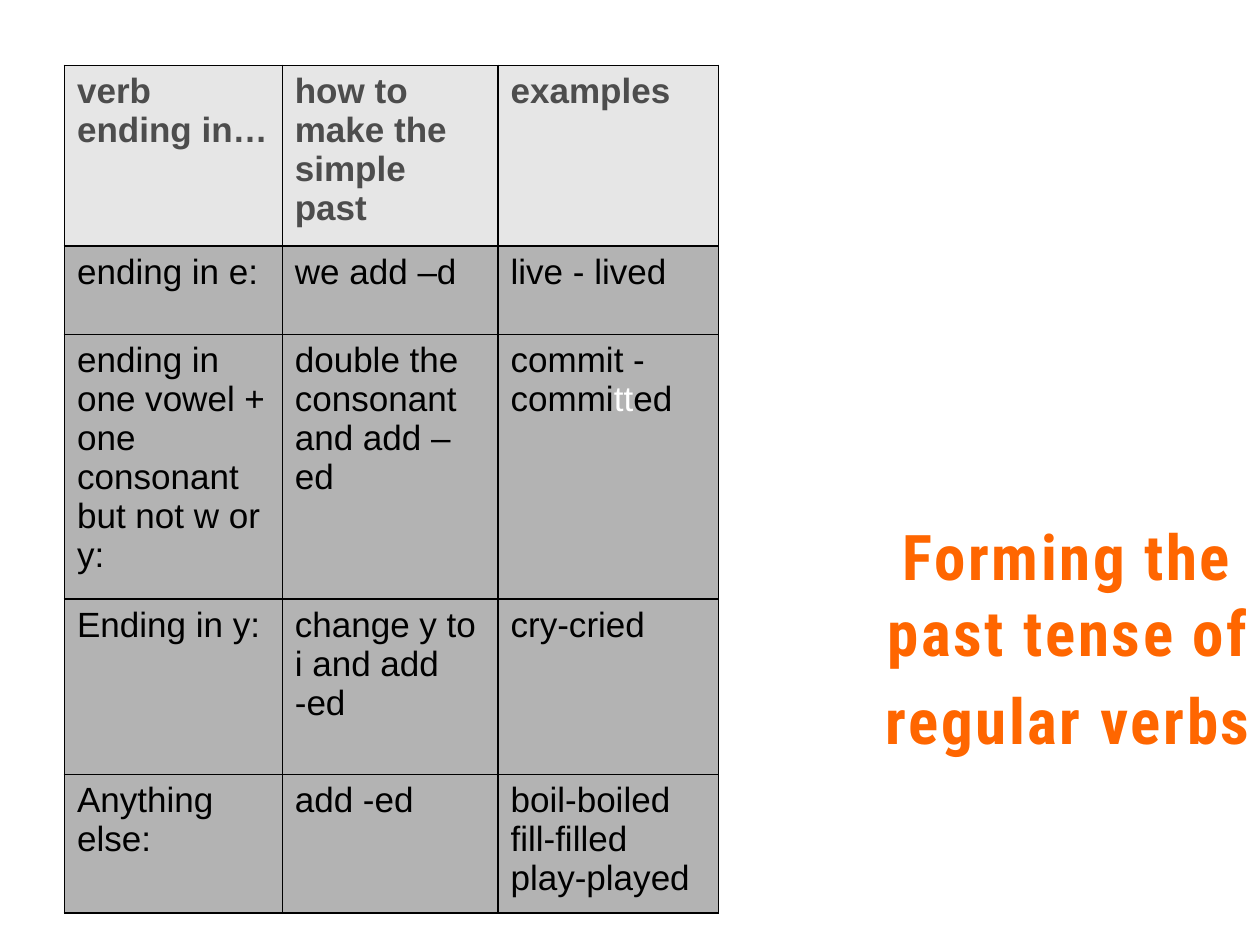
from lxml import etree
from pptx import Presentation
from pptx import util as u
from pptx.dml.color import RGBColor
from pptx.enum import text
from pptx.oxml import ns

BLACK = RGBColor(0x00, 0x00, 0x00)
WHITE = RGBColor(0xFF, 0xFF, 0xFF)
SLATE = RGBColor(0x4D, 0x4D, 0x4D)
LIGHT = RGBColor(0xE6, 0xE6, 0xE6)
GREY = RGBColor(0xB3, 0xB3, 0xB3)
ORANGE = RGBColor(0xFF, 0x66, 0x00)

WIDTHS = [4.39, 4.35, 4.45]
HEIGHTS = [3.53, 1.78, 4.6, 3.53, 1.78]
ROWS = [
    ["verb ending in…", "how to make the simple past", "examples"],
    ["ending in e:", "we add –d", "live - lived"],
    ["ending in one vowel + one consonant but not w or y:",
     "double the consonant and add –ed",
     [[("commit - commi", BLACK), ("tt", WHITE), ("ed", BLACK)]]],
    ["Ending in y:", "change y to i and add -ed", "cry-cried"],
    ["Anything else:", "add -ed", ["boil-boiled", "fill-filled", "play-played"]],
]


def write(frame, words, font="Arial", size=20, color=BLACK, bold=False,
          align=None, gap=0, track=0):
    paras = [words] if isinstance(words, str) else words
    for num, para in enumerate(paras):
        line = frame.add_paragraph() if num else frame.paragraphs[0]
        line.alignment = align
        if num and gap:
            line.space_before = u.Pt(gap)
        parts = [(para, color)] if isinstance(para, str) else para
        for part, tint in parts:
            run = line.add_run()
            run.text = part
            run.font.name = font
            run.font.size = u.Pt(size)
            run.font.bold = bold
            run.font.color.rgb = tint
            if track:
                run.font._element.set("spc", str(round(track * 100)))


class Deck:
    """Holds the style and the current slide, and adds elements to it."""

    def __init__(self, slide, edge=BLACK, weight=1):
        self.slide = slide
        self.edge = edge
        self.weight = weight

    def title(self, left, top, width, height, words):
        box = self.slide.shapes.add_textbox(
            u.Cm(left), u.Cm(top), u.Cm(width), u.Cm(height))
        box.text_frame.word_wrap = True
        write(box.text_frame, words, font="Roboto Condensed", size=36,
              color=ORANGE, bold=True, align=text.PP_ALIGN.CENTER,
              gap=7, track=1.5)

    def border(self, cell):
        props = cell._tc.get_or_add_tcPr()
        for spot, side in enumerate(("lnL", "lnR", "lnT", "lnB")):
            line = etree.Element(ns.qn(f"a:{side}"), w=str(u.Pt(self.weight)))
            fill = etree.SubElement(line, ns.qn("a:solidFill"))
            etree.SubElement(fill, ns.qn("a:srgbClr"), val=str(self.edge))
            props.insert(spot, line)

    def table(self, left, top, widths, heights, rows):
        grid = self.slide.shapes.add_table(
            len(rows), len(widths), u.Cm(left), u.Cm(top),
            u.Cm(sum(widths)), u.Cm(sum(heights))).table
        for col, width in zip(grid.columns, widths):
            col.width = u.Cm(width)
        for num, (row, height) in enumerate(zip(grid.rows, heights)):
            row.height = u.Cm(height)
            head = num == 0
            for cell, words in zip(row.cells, rows[num]):
                cell.fill.solid()
                cell.fill.fore_color.rgb = LIGHT if head else GREY
                self.border(cell)
                write(cell.text_frame, words, bold=head,
                      color=SLATE if head else BLACK)


def main():
    show = Presentation()
    show.slide_width, show.slide_height = u.Cm(25.4), u.Cm(19.05)
    deck = Deck(show.slides.add_slide(show.slide_layouts[6]))
    deck.title(17.3, 10.31, 8.46, 6.15,
               ["Forming the past tense of", "regular verbs"])
    deck.table(1.3, 1.32, WIDTHS, HEIGHTS, ROWS)
    show.save("out.pptx")


if __name__ == "__main__":
    main()
